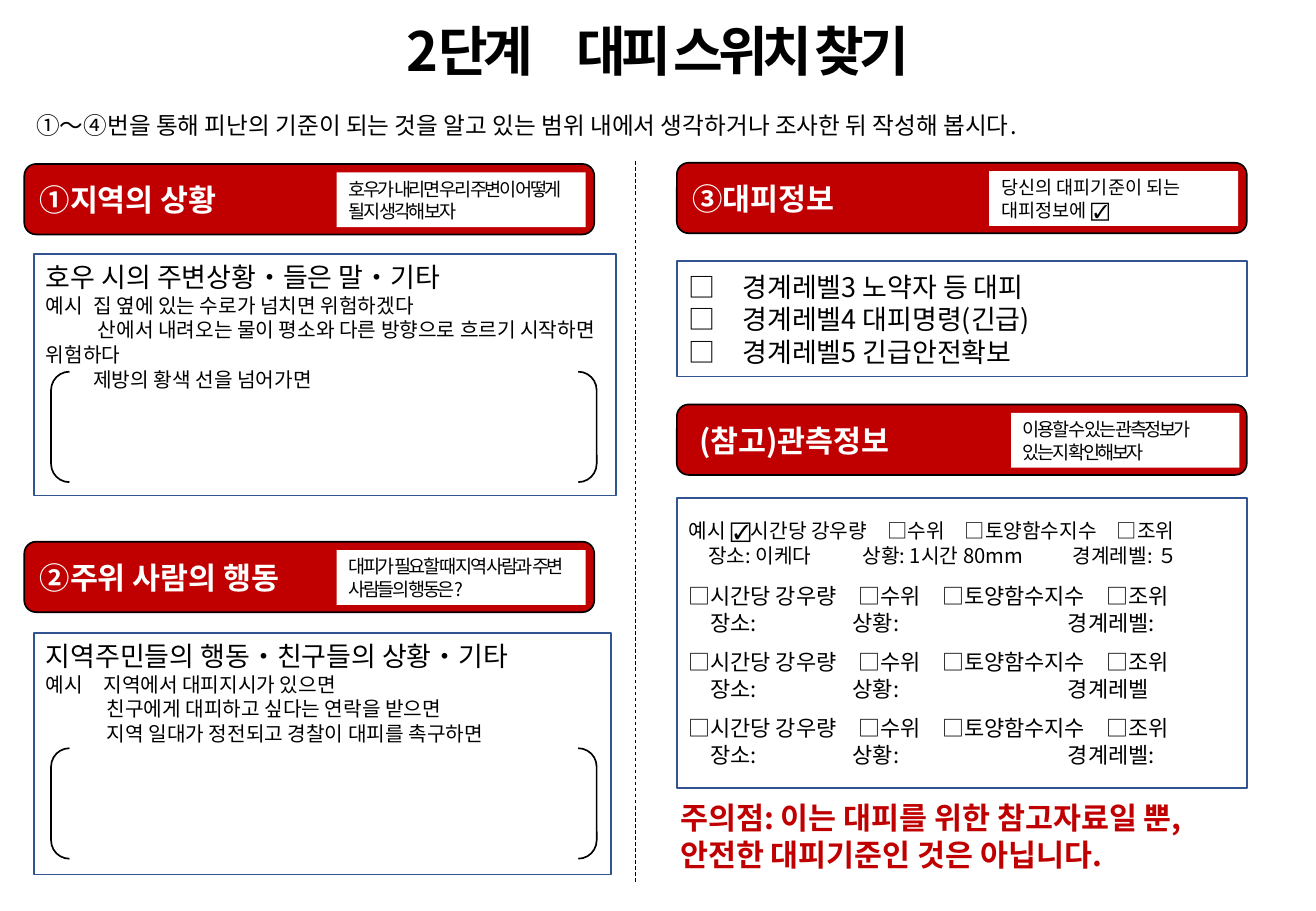
import pptx
import pptx.util
import pptx.dml.color
import pptx.enum.dml
import pptx.enum.shapes
import pptx.enum.text
import pptx.oxml.ns
import lxml.etree

FONT = "Noto Sans CJK KR"
LINE_RATIO = 1.22
COLORS = {"red": "C00000", "black": "000000", "white": "FFFFFF", "blue": "325491"}
SHAPE = pptx.enum.shapes.MSO_SHAPE
ANCHOR = pptx.enum.text.MSO_ANCHOR
ALIGN = pptx.enum.text.PP_ALIGN
qn = pptx.oxml.ns.qn


def px(n):
    return pptx.util.Emu(n * 9144)


def rgb(name):
    return pptx.dml.color.RGBColor.from_string(COLORS[name])


class Sheet:
    """Draws the elements of one worksheet slide in a shared style."""

    def __init__(self, s):
        self.s = s

    def shape(self, kind, box, fill=None, line=None):
        sp = self.s.shapes.add_shape(kind, *map(px, box))
        sp.shadow.inherit = False
        if fill:
            sp.fill.solid()
            sp.fill.fore_color.rgb = rgb(fill)
        else:
            sp.fill.background()
        if line:
            sp.line.color.rgb = rgb(line)
            sp.line.width = pptx.util.Pt(1)
        else:
            sp.line.fill.background()
        return sp

    def put_rows(self, sp, rows, color="black", bold=False, spc=0,
                 anchor=ANCHOR.MIDDLE, align=ALIGN.LEFT):
        tf = sp.text_frame
        tf.word_wrap = True
        tf.vertical_anchor = anchor
        tf.text = "\n".join(row[0] for row in rows)
        for p, (_, size, *layout) in zip(tf.paragraphs, rows):
            tabs, before = (*layout, *([], 0)[len(layout):])
            p.alignment = align
            p.line_spacing = pptx.util.Pt(round(LINE_RATIO * size, 1))
            if before:
                p.space_before = pptx.util.Pt(before)
            if tabs:
                self.tab_stops(p, tabs)
            for r in p.runs:
                r.font.size = pptx.util.Pt(size)
                r.font.bold = bold
                r.font.color.rgb = rgb(color)
                r.font.name = FONT
                rPr = r.font._element
                lxml.etree.SubElement(rPr, qn("a:ea")).set("typeface", FONT)
                if spc:
                    rPr.set("spc", str(spc))

    def tab_stops(self, p, tabs):
        pPr = p._p.get_or_add_pPr()
        lst = lxml.etree.SubElement(pPr, qn("a:tabLst"))
        for pos in tabs:
            lxml.etree.SubElement(lst, qn("a:tab"), pos=str(int(px(pos))), algn="l")

    def text(self, box, rows, **style):
        sp = self.s.shapes.add_textbox(*map(px, box))
        self.put_rows(sp, rows, **style)

    def banner(self, x, y, title, hint, hint_x, hint_w, spc=-150):
        sp = self.shape(SHAPE.ROUNDED_RECTANGLE, (x, y, 469, 58), "red", "black")
        self.put_rows(sp, [(title, 18)], color="white", bold=True)
        sp = self.shape(SHAPE.RECTANGLE, (hint_x, y + 7, hint_w, 45), "white")
        self.put_rows(sp, [(hint, 11)], spc=spc)

    def panel(self, box, rows, anchor=ANCHOR.MIDDLE):
        sp = self.shape(SHAPE.RECTANGLE, box, line="blue")
        self.put_rows(sp, rows, anchor=anchor)

    def brackets(self, y):
        self.shape(SHAPE.DOUBLE_BRACKET, (42, y, 449, 91), line="black")

    def divider(self, x, y1, y2):
        c = self.s.shapes.add_connector(
            pptx.enum.shapes.MSO_CONNECTOR.STRAIGHT, px(x), px(y1), px(x), px(y2))
        c.line.color.rgb = rgb("black")
        c.line.width = pptx.util.Pt(0.5)
        c.line.dash_style = pptx.enum.dml.MSO_LINE.DASH
        lxml.etree.SubElement(c._element.spPr, qn("a:effectLst"))


def main():
    prs = pptx.Presentation()
    prs.slide_width, prs.slide_height = px(1083), px(750)
    sheet = Sheet(prs.slides.add_slide(prs.slide_layouts[6]))

    sheet.text((0, 5, 1083, 71), [("2단계　대피 스위치 찾기", 32)],
               bold=True, spc=-300, align=ALIGN.CENTER)
    sheet.text((20, 80, 1022, 45), [(
        "①～④번을 통해 피난의 기준이 되는 것을 알고 있는 범위 내에서 "
        "생각하거나 조사한 뒤 작성해 봅시다.", 14)])
    sheet.divider(523, 726, 131)

    sheet.banner(20, 135, "①지역의 상황",
                 "호우가 내리면 우리 주변이 어떻게 될지 생각해 보자", 277, 205)
    sheet.banner(20, 446, "②주위 사람의 행동",
                 "대피가 필요할 때 지역 사람과 주변 사람들의 행동은?", 277, 205)
    sheet.banner(557, 134, "③대피정보",
                 "당신의 대피기준이 되는\v대피정보에 ☑", 814, 205, spc=0)
    sheet.banner(557, 333, " (참고)관측정보",
                 "이용할 수 있는 관측정보가 있는지 확인해보자", 832, 188)

    sheet.panel((28, 209, 479, 199), [
        ("호우 시의 주변상황・들은 말・기타", 16),
        ("예시\t집 옆에 있는 수로가 넘치면 위험하겠다", 12, [39]),
        ("\t 산에서 내려오는 물이 평소와 다른 방향으로 흐르기 시작하면 위험하다", 12, [39]),
        ("\t제방의 황색 선을 넘어가면", 12, [39]),
    ], ANCHOR.TOP)
    sheet.panel((28, 521, 475, 199), [
        ("지역주민들의 행동・친구들의 상황・기타", 16),
        ("예시　지역에서 대피지시가 있으면", 12),
        ("\t친구에게 대피하고 싶다는 연락을 받으면", 12, [50]),
        ("\t지역 일대가 정전되고 경찰이 대피를 촉구하면", 12, [50]),
    ], ANCHOR.TOP)
    for y in (306, 616):
        sheet.brackets(y)

    levels = ("3 노약자 등 대피", "4 대피명령(긴급)", "5 긴급안전확보")
    sheet.panel((557, 215, 469, 95),
                [(f"□　경계레벨{level}", 16) for level in levels])

    items = "시간당 강우량　□수위　□토양함수지수　□조위"
    rows = [("예시 ☑" + items, 12),
            ("\t장소: 이케다\t상황: 1시간 80mm\t경계레벨: ５", 12, [16, 143, 316])]
    for before, end in ((8.5, ":"), (7.5, ""), (7.5, ":")):
        rows += [("□" + items, 13, [], before),
                 ("\t장소:\t상황:\t경계레벨" + end, 13, [18, 135, 312])]
    sheet.panel((557, 410, 469, 239), rows)

    sheet.text((550, 659, 506, 58), [
        ("주의점: 이는 대피를 위한 참고자료일 뿐,", 18),
        ("안전한 대피기준인 것은 아닙니다.", 18),
    ], color="red", bold=True)
    prs.save("out.pptx")


if __name__ == "__main__":
    main()
